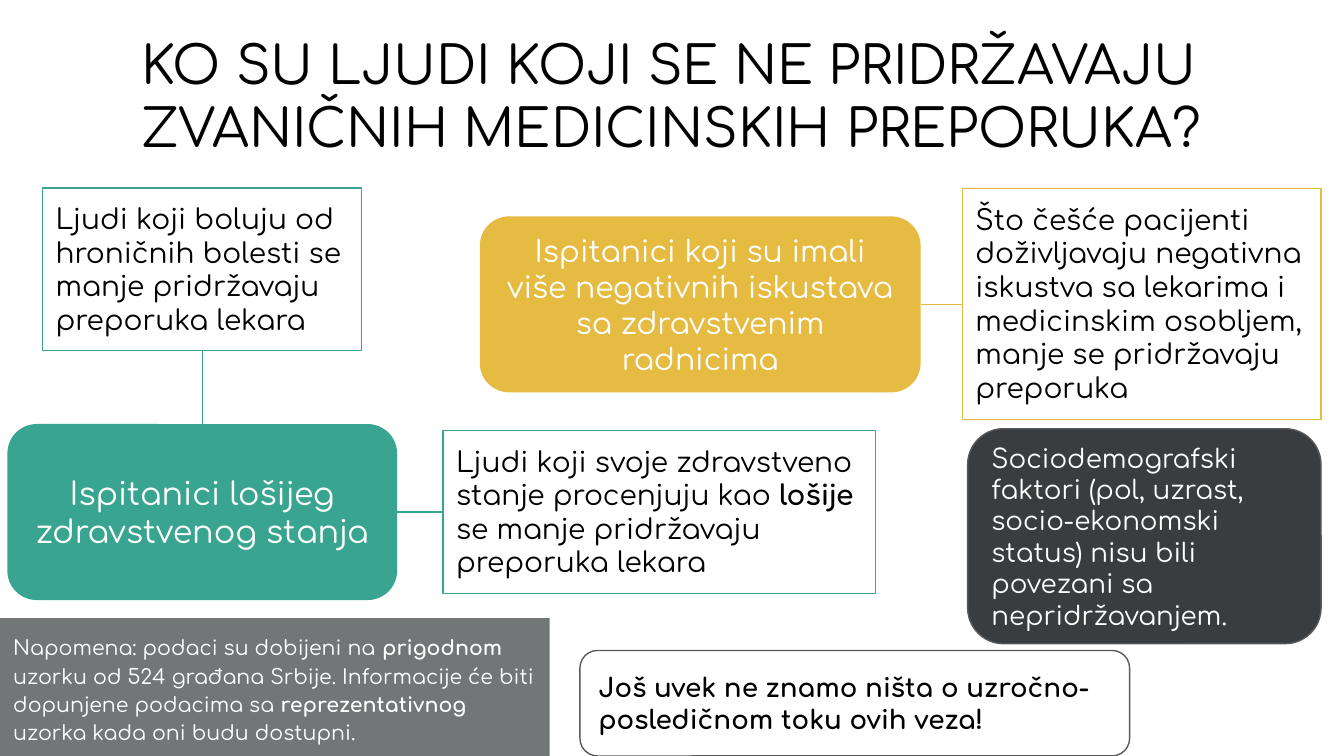
"""Build the slide on people who do not follow medical advice."""
from lxml.etree import SubElement
from pptx import Presentation
from pptx.dml.color import RGBColor
from pptx.enum.shapes import MSO_CONNECTOR, MSO_SHAPE
from pptx.enum.text import MSO_ANCHOR, MSO_AUTO_SIZE, PP_ALIGN
from pptx.oxml.ns import qn
from pptx.util import Pt

PX = 4572
GREEN, GOLD, DARK, GREY = "39A590", "E6BB41", "3A3D40", "737677"
EDGE, WHITE, BLACK = "595959", "FFFFFF", "000000"
LEFT, MID = PP_ALIGN.LEFT, PP_ALIGN.CENTER


def color(code):
    """Turn a hex string into a colour."""
    return RGBColor.from_string(code)


def write(shape, text, size, ink, align=LEFT, anchor=MSO_ANCHOR.TOP):
    """Fill a shape with one paragraph, bold between asterisks."""
    frame = shape.text_frame
    frame.word_wrap = True
    frame.auto_size = MSO_AUTO_SIZE.NONE
    frame.vertical_anchor = anchor
    frame.margin_left = frame.margin_right = 20 * PX
    frame.margin_top = frame.margin_bottom = 20 * PX
    para = frame.paragraphs[0]
    para.alignment = align
    font = para.font
    font.name, font.size = "Comfortaa", Pt(size)
    font.color.rgb = color(ink)
    for i, part in enumerate(text.split("*")):
        if part:
            run = para.add_run()
            run.text = part
            run.font.bold = i % 2 == 1
    return para


deck = Presentation()
deck.slide_width, deck.slide_height = 2000 * PX, 1125 * PX
slide = deck.slides.add_slide(deck.slide_layouts[5])
shapes = slide.shapes

title = shapes.title
title.left, title.top, title.width, title.height = 190 * PX, 28 * PX, 1788 * PX, 230 * PX
write(title, "KO SU LJUDI KOJI SE NE PRIDRŽAVAJU ZVANIČNIH MEDICINSKIH PREPORUKA?", 28, BLACK)

cards = [
    (11, 631, 580, 262, GREEN, None, 17, WHITE, MID,
     "Ispitanici lošijeg zdravstvenog stanja"),
    (714, 322, 656, 262, GOLD, None, 16, WHITE, MID,
     "Ispitanici koji su imali više negativnih iskustava sa zdravstvenim radnicima"),
    (1440, 638, 526, 320, DARK, EDGE, 14, WHITE, LEFT,
     "Sociodemografski faktori (pol, uzrast, socio-ekonomski status) "
     "nisu bili povezani sa nepridržavanjem."),
    (863, 968, 818, 157, WHITE, EDGE, 14, BLACK, LEFT,
     "*Još uvek ne znamo ništa o uzročno-posledičnom toku ovih veza!*"),
]
notes = [
    (659, 641, 644, 242, None, GREEN, 15, BLACK, LEFT,
     "Ljudi koji svoje zdravstveno stanje procenjuju kao *lošije* "
     "se manje pridržavaju preporuka lekara"),
    (63, 280, 475, 242, None, GREEN, 15, BLACK, LEFT,
     "Ljudi koji boluju od hroničnih bolesti se manje pridržavaju preporuka lekara"),
    (1432, 281, 534, 343, None, GOLD, 15, BLACK, LEFT,
     "Što češće pacijenti doživljavaju negativna iskustva sa lekarima "
     "i medicinskim osobljem, manje se pridržavaju preporuka"),
    (0, 920, 818, 205, GREY, None, 11, WHITE, LEFT,
     "Napomena: podaci su dobijeni na *prigodnom *uzorku od 524 građana Srbije. "
     "Informacije će biti dopunjene podacima sa *reprezentativnog *"
     "uzorka kada oni budu dostupni."),
]
kinds = [(MSO_SHAPE.ROUNDED_RECTANGLE, MSO_ANCHOR.MIDDLE, cards),
         (MSO_SHAPE.RECTANGLE, MSO_ANCHOR.TOP, notes)]
for kind, anchor, group in kinds:
    for x, y, w, h, fill, line, size, ink, align, text in group:
        box = shapes.add_shape(kind, x * PX, y * PX, w * PX, h * PX)
        box.shadow.inherit = False
        if fill:
            box.fill.solid()
            box.fill.fore_color.rgb = color(fill)
        else:
            box.fill.background()
        if line:
            box.line.color.rgb = color(line)
            box.line.width = Pt(0.75)
        else:
            box.line.fill.background()
        para = write(box, text, size, ink, align, anchor)
        if fill == GREY:
            para.line_spacing = 1.15

links = [(301, 522, 301, 631, GREEN), (591, 762, 659, 762, GREEN),
         (1370, 453, 1432, 453, GOLD)]
for x, y, x2, y2, ink in links:
    link = shapes.add_connector(MSO_CONNECTOR.STRAIGHT, x * PX, y * PX, x2 * PX, y2 * PX)
    link.line.color.rgb = color(ink)
    link.line.width = Pt(0.75)
    SubElement(link._element.spPr, qn("a:effectLst"))

deck.save("out.pptx")
